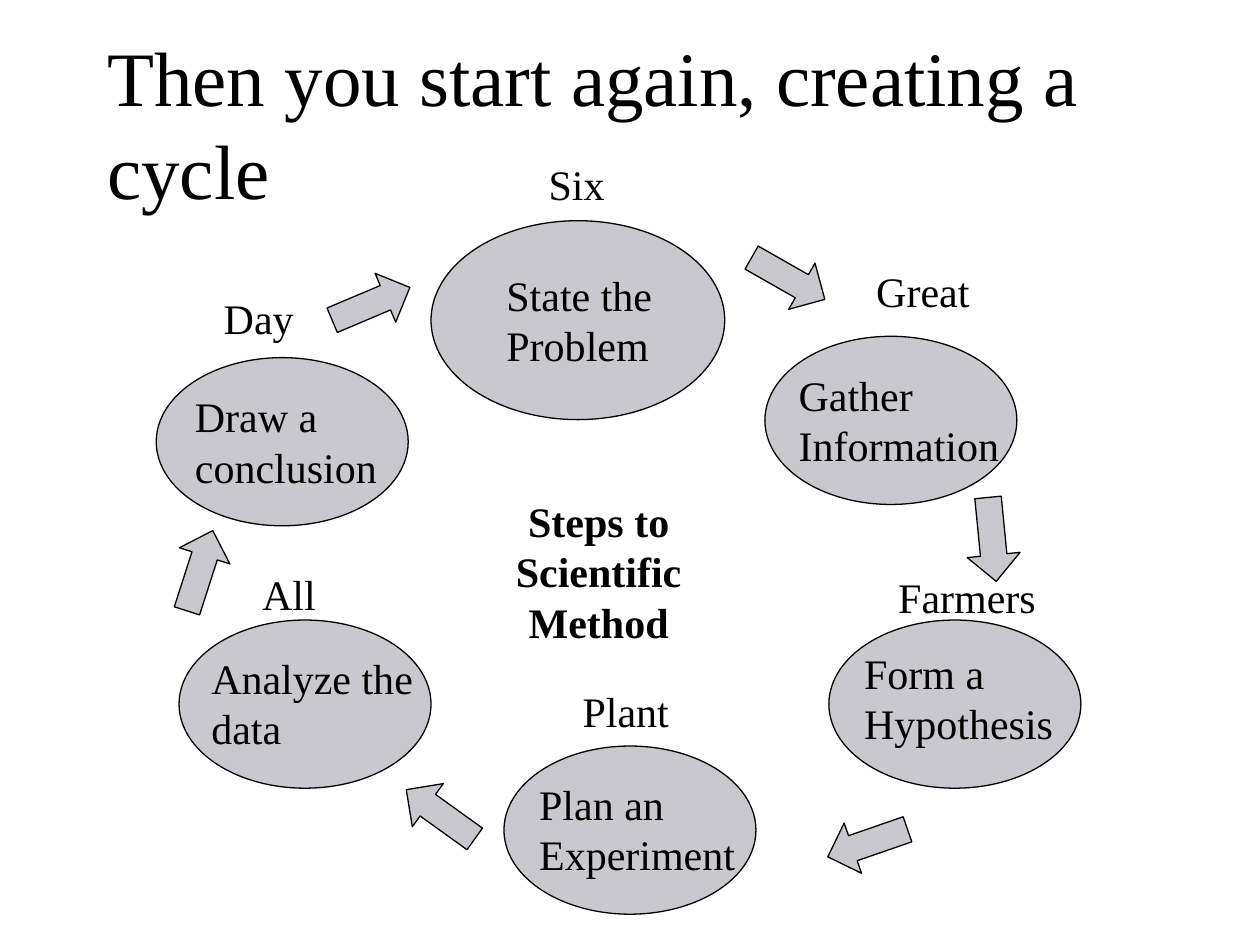
from dataclasses import dataclass

from pptx import Presentation
from pptx.dml.color import RGBColor
from pptx.enum.shapes import MSO_SHAPE
from pptx.enum.text import MSO_ANCHOR, MSO_AUTO_SIZE, PP_ALIGN
from pptx.util import Cm, Pt

ELLIPSE, ARROW = MSO_SHAPE.OVAL, MSO_SHAPE.RIGHT_ARROW
LEFT, CENTER = PP_ALIGN.LEFT, PP_ALIGN.CENTER
BOTTOM = MSO_ANCHOR.BOTTOM
NO_FIT, GROW = MSO_AUTO_SIZE.NONE, MSO_AUTO_SIZE.SHAPE_TO_FIT_TEXT

FONT = "Times New Roman"
COLORS = {"text": "000000", "line": "000000", "fill": "C8C8CE"}
ARROW_SIZE = (1.7, 1.07)
LABEL_SIZE = (4.19, 1.27)
TEXT_HEIGHT = 2.31


@dataclass
class Step:
    """One stage of the cycle; positions and sizes in centimetres."""
    text: str
    text_at: tuple[float, float]
    ellipse_at: tuple[float, float]
    label: str
    label_at: tuple[float, float]
    arrow_at: tuple[float, float]
    arrow_angle: float
    ellipse_size: tuple[float, float] = (5.08, 3.39)
    text_width: float = 4.62


STEPS = [
    Step("State the Problem", (9.96, 5.31), (8.69, 4.45), "Six", (9.53, 3.07),
         (15.04, 5.08), 29.7, ellipse_size=(5.92, 4.01), text_width=3.78),
    Step("Gather Information", (15.85, 7.32), (15.42, 6.78), "Great", (16.51, 5.23),
         (19.15, 10.34), 84.4),
    Step("Form a Hypothesis", (17.17, 12.93), (16.71, 12.5), "Farmers", (17.4, 11.4),
         (16.64, 16.46), 160.9),
    Step("Plan an Experiment", (10.62, 15.57), (10.16, 15.04), "Plant", (10.52, 13.69),
         (8.03, 15.88), 215.7),
    Step("Analyze the data", (4.01, 13.03), (3.61, 12.5), "All", (3.73, 11.33),
         (3.18, 10.97), 287.8),
    Step("Draw a conclusion", (3.68, 7.75), (3.15, 7.21), "Day", (3.12, 5.77),
         (6.63, 5.59), 337.1),
]


def color(name: str) -> RGBColor:
    return RGBColor.from_string(COLORS[name])


def write(tf, text: str, size: float, align=LEFT, bold: bool = False) -> None:
    tf.word_wrap = True
    p = tf.paragraphs[0]
    p.alignment = align
    r = p.add_run()
    r.text = text
    r.font.name = FONT
    r.font.size = Pt(size)
    r.font.bold = bold
    r.font.color.rgb = color("text")


def add_text(s, text: str, at: tuple[float, float], size: tuple[float, float],
             align=LEFT, bold: bool = False) -> None:
    tf = s.shapes.add_textbox(*map(Cm, at + size)).text_frame
    write(tf, text, 24, align, bold)
    tf.auto_size = GROW


def add_figure(s, kind, at: tuple[float, float], size: tuple[float, float],
               angle: float = 0) -> None:
    sp = s.shapes.add_shape(kind, *map(Cm, at + size))
    sp.rotation = angle
    sp.shadow.inherit = False
    sp.fill.solid()
    sp.fill.fore_color.rgb = color("fill")
    sp.line.color.rgb = color("line")
    sp.line.width = Pt(0.75)


def add_title(s, text: str) -> None:
    title = s.shapes.title
    title.left, title.top = Cm(1.91), Cm(1.27)
    title.width, title.height = Cm(21.59), Cm(3.18)
    tf = title.text_frame
    tf.vertical_anchor = BOTTOM
    tf.auto_size = NO_FIT
    write(tf, text, 44)


def main() -> None:
    prs = Presentation()
    prs.slide_width, prs.slide_height = Cm(25.4), Cm(19.05)
    s = prs.slides.add_slide(prs.slide_layouts[5])
    add_title(s, "Then you start again, creating a cycle")
    for step in STEPS:
        add_figure(s, ELLIPSE, step.ellipse_at, step.ellipse_size)
    for step in STEPS:
        add_text(s, step.text, step.text_at, (step.text_width, TEXT_HEIGHT))
    add_text(s, "Steps to Scientific Method", (9.53, 9.86), (5.08, 3.33), CENTER, bold=True)
    for step in STEPS:
        add_figure(s, ARROW, step.arrow_at, ARROW_SIZE, step.arrow_angle)
    for step in STEPS:
        add_text(s, step.label, step.label_at, LABEL_SIZE, CENTER)
    prs.save("out.pptx")


if __name__ == "__main__":
    main()
